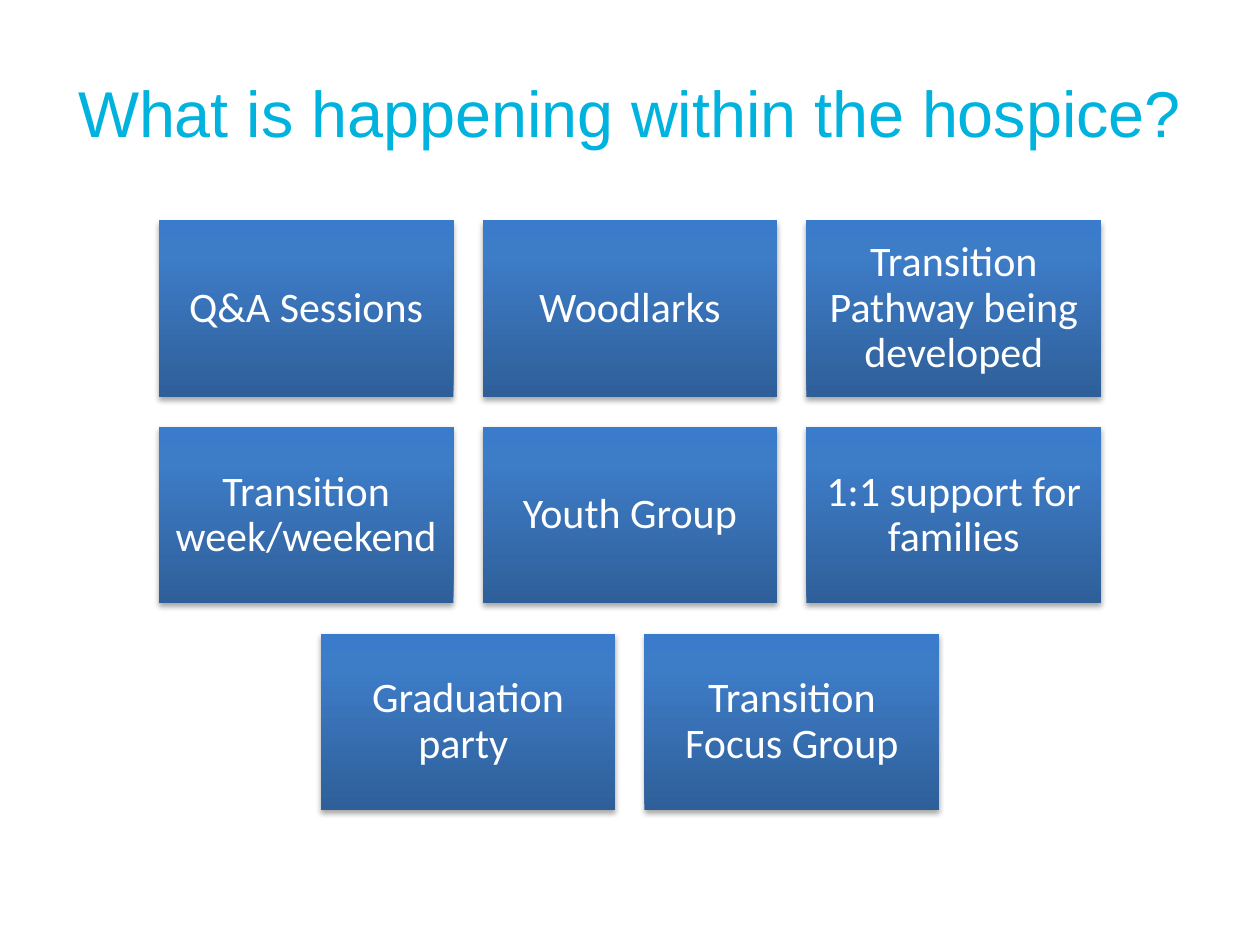
from lxml import etree
from pptx import Presentation
from pptx.dml.color import RGBColor
from pptx.enum.shapes import MSO_SHAPE
from pptx.enum.text import MSO_ANCHOR, PP_ALIGN
from pptx.oxml import parse_xml
from pptx.oxml.ns import nsdecls, qn
from pptx.util import Inches, Pt

RECTANGLE = MSO_SHAPE.RECTANGLE
MIDDLE = MSO_ANCHOR.MIDDLE
CENTER = PP_ALIGN.CENTER

CYAN = RGBColor(0x00, 0xB3, 0xDF)
WHITE = RGBColor(0xFF, 0xFF, 0xFF)
BLACK = RGBColor(0x00, 0x00, 0x00)
TILE_GRADIENT = (
    (0, RGBColor(0x2F, 0x5F, 0x99)),
    (80, RGBColor(0x3D, 0x7C, 0xC7)),
    (100, RGBColor(0x3A, 0x7C, 0xCB)),
)

SLIDE_WIDTH = 10
TILE_WIDTH, TILE_HEIGHT = 2.34, 1.4
COLUMN_STEP, ROW_STEP = 2.57, 1.64
FIRST_ROW_TOP = 1.75

ACTIVITIES = (
    ("Q&A Sessions", "Woodlarks", "Transition Pathway being developed"),
    ("Transition week/weekend", "Youth Group", "1:1 support for families"),
    ("Graduation party ", "Transition Focus Group"),
)


class SlideBuilder:
    heading_font = "Arial"
    tile_font = "Calibri"

    def __init__(self, slide):
        self.slide = slide

    def add_text(self, frame, text, font, size, color):
        frame.word_wrap = True
        frame.vertical_anchor = MIDDLE
        paragraph = frame.paragraphs[0]
        paragraph.alignment = CENTER
        paragraph.line_spacing = 0.9
        run = paragraph.add_run()
        run.text = text
        run.font.name = font
        run.font.size = Pt(size)
        run.font.color.rgb = color

    def heading(self, text, left, top, width, height):
        box = self.slide.shapes.add_textbox(
            Inches(left), Inches(top), Inches(width), Inches(height))
        self.add_text(box.text_frame, text, self.heading_font, 37, CYAN)

    def tile(self, text, left, top):
        tile = self.slide.shapes.add_shape(
            RECTANGLE, Inches(left), Inches(top),
            Inches(TILE_WIDTH), Inches(TILE_HEIGHT))
        self.shade(tile)
        tile.line.fill.background()
        self.drop_shadow(tile)
        frame = tile.text_frame
        frame.margin_left = frame.margin_right = Inches(0.1)
        frame.margin_top = frame.margin_bottom = Inches(0.1)
        self.add_text(frame, text, self.tile_font, 24, WHITE)

    def shade(self, shape):
        stops = "".join(
            f'<a:gs pos="{percent * 1000}"><a:srgbClr val="{color}"/></a:gs>'
            for percent, color in TILE_GRADIENT)
        gradient = parse_xml(
            f'<a:gradFill {nsdecls("a")} rotWithShape="1">'
            f'<a:gsLst>{stops}</a:gsLst>'
            '<a:lin ang="16200000" scaled="0"/></a:gradFill>')
        shape.element.spPr.find(qn("a:prstGeom")).addnext(gradient)

    def drop_shadow(self, shape):
        shape.shadow.inherit = False
        effects = shape.element.spPr.find(qn("a:effectLst"))
        shadow = etree.SubElement(
            effects, qn("a:outerShdw"), blurRad=str(Pt(3.1)),
            dist=str(Pt(1.8)), dir="5400000", rotWithShape="0")
        color = etree.SubElement(shadow, qn("a:srgbClr"), val=str(BLACK))
        etree.SubElement(color, qn("a:alpha"), val="35000")

    def tile_row(self, labels, top):
        row_width = COLUMN_STEP * (len(labels) - 1) + TILE_WIDTH
        left = (SLIDE_WIDTH - row_width) / 2
        for column, label in enumerate(labels):
            self.tile(label, left + column * COLUMN_STEP, top)


def main():
    presentation = Presentation()
    presentation.slide_width = Inches(SLIDE_WIDTH)
    presentation.slide_height = Inches(7.5)
    builder = SlideBuilder(
        presentation.slides.add_slide(presentation.slide_layouts[6]))
    builder.heading("What is happening within the hospice?", 0.5, 0.3, 9, 1.25)
    for row, labels in enumerate(ACTIVITIES):
        builder.tile_row(labels, FIRST_ROW_TOP + row * ROW_STEP)
    presentation.save("out.pptx")


if __name__ == "__main__":
    main()
